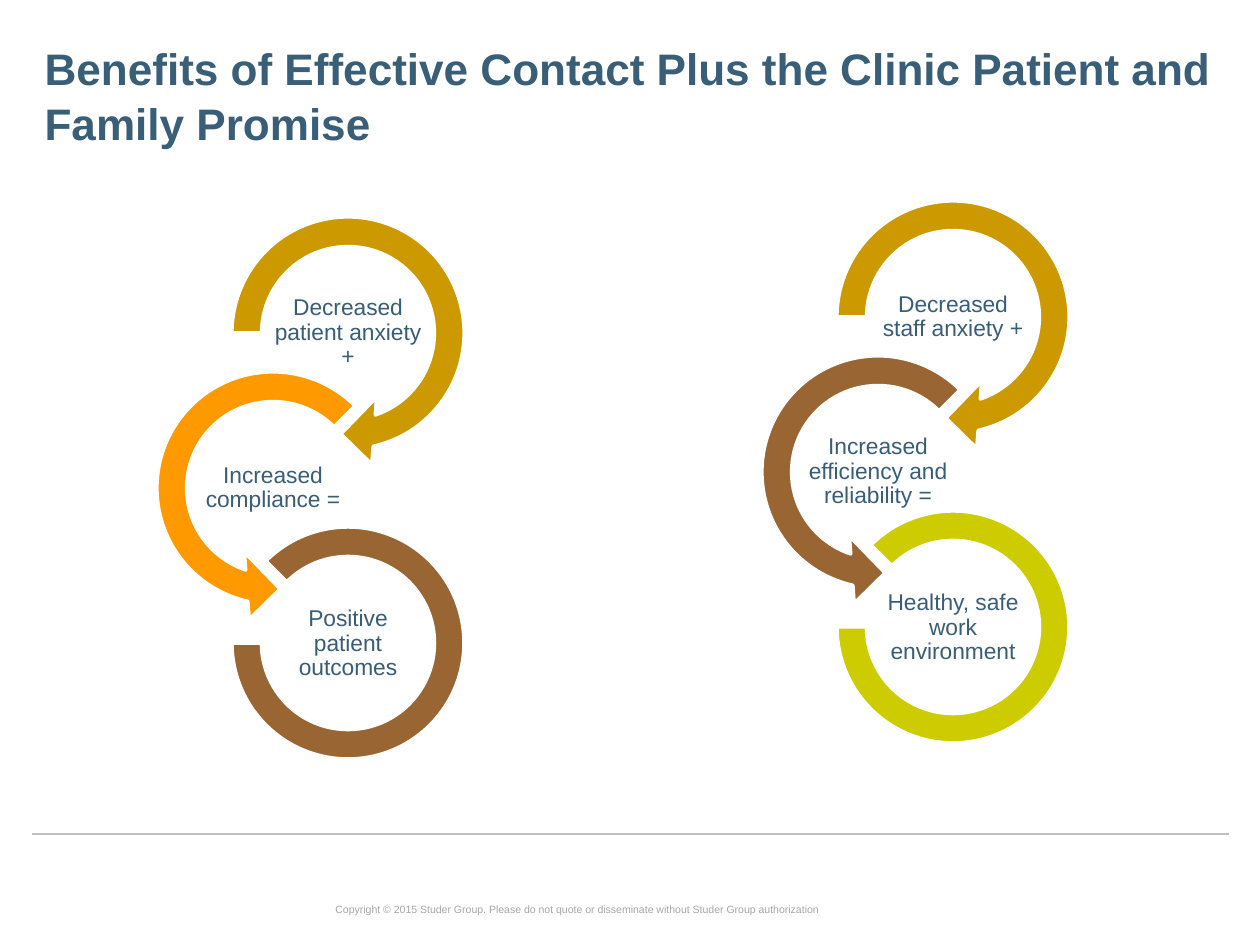
"""Build the slide on the benefits for patients and staff."""
from lxml import etree
from pptx import Presentation
from pptx.dml.color import RGBColor
from pptx.enum.shapes import MSO_CONNECTOR, MSO_SHAPE
from pptx.enum.text import MSO_ANCHOR as ANCHOR, MSO_AUTO_SIZE as AUTO, PP_ALIGN as ALIGN
from pptx.oxml.ns import qn
from pptx.util import Emu, Pt


def px(*values):
    return [Emu(round(v * 914400 / 126)) for v in values]


def paint(color_format, hex_color):
    color_format.rgb = RGBColor.from_string(hex_color)


prs = Presentation()
prs.slide_width, prs.slide_height = px(1260, 945)
s = prs.slides.add_slide(prs.slide_layouts[5])

rule = s.shapes.add_connector(MSO_CONNECTOR.STRAIGHT, *px(32, 834, 1229, 834))
rule.line.width = Pt(0.75)
paint(rule.line.color, "BFBFBF")
etree.SubElement(rule._element.spPr, qn("a:effectLst"))

title = s.shapes.title
title.left, title.top, title.width, title.height = px(32, 32, 1197, 105)
tf = title.text_frame
tf.text = "Benefits of Effective Contact Plus the Clinic Patient and Family Promise"
tf.word_wrap = True
tf.auto_size = AUTO.NONE
tf.vertical_anchor = ANCHOR.TOP
p = tf.paragraphs[0]
p.alignment = ALIGN.LEFT
p.line_spacing = 1.05
p.font.name, p.font.size, p.font.bold = "Arial", Pt(25.2), True
paint(p.font.color, "395E77")

notice = s.shapes.add_textbox(*px(323, 897, 785, 25))
tf = notice.text_frame
tf.word_wrap = True
p = tf.paragraphs[0]
p.text = ("Copyright © 2015 Studer Group. Please do not quote or disseminate "
          "without Studer Group authorization")
p.font.name, p.font.size = "Arial", Pt(6)
paint(p.font.color, "A6A6A6")

rings = [
    (MSO_SHAPE.CIRCULAR_ARROW, 213, 198, 270, (0.11, 11.42, 45, 108, 0.125), 273, 296),
    (MSO_SHAPE.LEFT_CIRCULAR_ARROW, 138, 353, 270, (0.11, 11.42, 63, 189, 0.125), 198, 451),
    (MSO_SHAPE.BLOCK_ARC, 232, 527, 232, (135, 108, 0.127), 273, 607),
]
chains = [
    (0, 0, [("Decreased patient anxiety +", "CC9900"),
            ("Increased compliance =", "FF9900"),
            ("Positive patient outcomes", "996633")]),
    (605, -16, [("Decreased staff anxiety +", "CC9900"),
                ("Increased efficiency and reliability =", "996633"),
                ("Healthy, safe work environment", "CCCC00")]),
]
for dx, dy, steps in chains:
    for (kind, x, y, size, adjustments, label_x, label_y), (text, color) in zip(rings, steps):
        ring = s.shapes.add_shape(kind, *px(x + dx, y + dy, size, size))
        for i, value in enumerate(adjustments):
            ring.adjustments[i] = value
        ring.shadow.inherit = False
        ring.fill.solid()
        paint(ring.fill.fore_color, color)
        ring.line.width = Pt(2)
        paint(ring.line.color, "FFFFFF")

        label = s.shapes.add_textbox(*px(label_x + dx, label_y + dy, 150, 74))
        tf = label.text_frame
        tf.word_wrap = True
        tf.vertical_anchor = ANCHOR.MIDDLE
        tf.margin_left, tf.margin_top, tf.margin_right, tf.margin_bottom = px(1, 1, 1, 1)
        p = tf.paragraphs[0]
        p.text = text
        p.alignment = ALIGN.CENTER
        p.line_spacing = 0.9
        p.font.name, p.font.size = "Arial", Pt(13)
        paint(p.font.color, "395D77")

prs.save("out.pptx")
